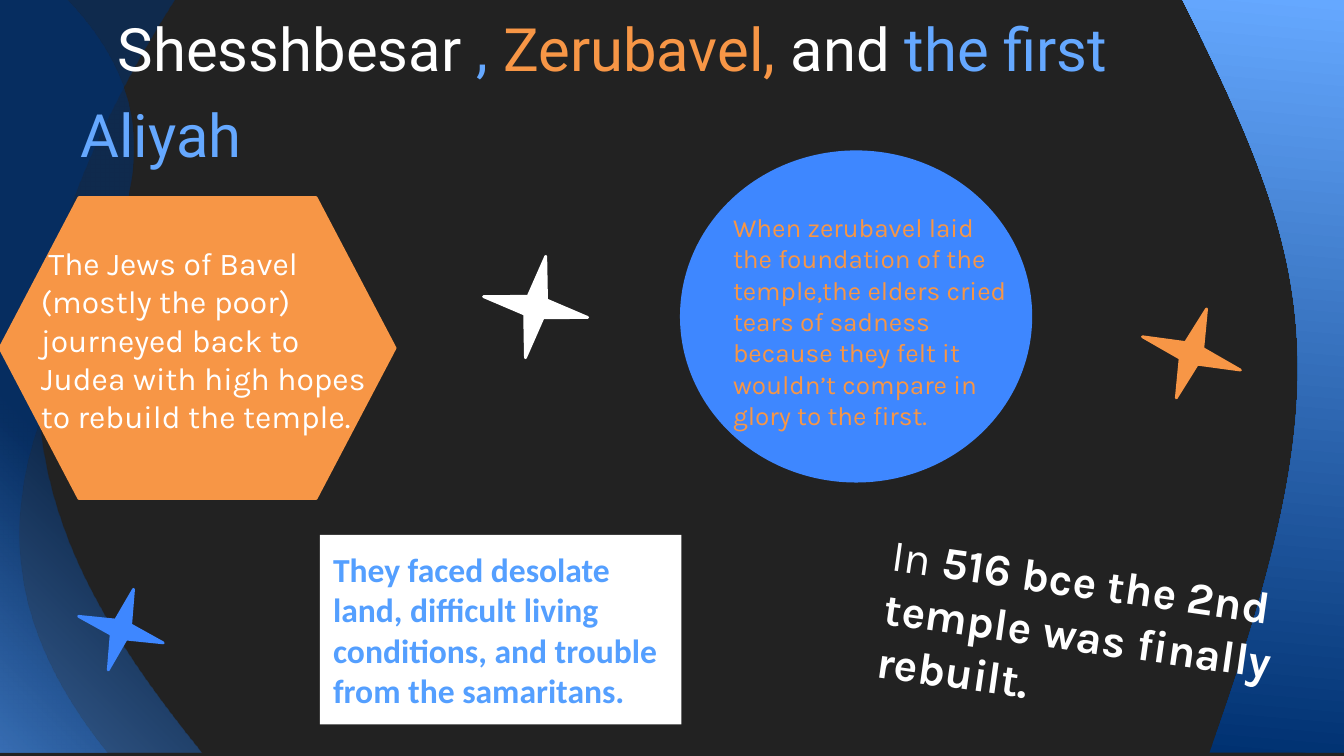
from dataclasses import dataclass
from typing import NamedTuple

from lxml import etree
from pptx import Presentation
from pptx.dml.color import RGBColor
from pptx.enum.shapes import MSO_SHAPE as Shape
from pptx.enum.text import MSO_ANCHOR as Anchor, PP_ALIGN as Align
from pptx.oxml.ns import nsdecls, qn
from pptx.util import Inches, Pt

CELL = Inches(0.1)  # grid of square cells
COLS, ROWS = 100, 56.25


@dataclass(frozen=True)
class Theme:
    ground: str = "222222"
    white: str = "FFFFFF"
    orange: str = "F79646"
    blue: str = "3E87FF"
    sky: str = "65A8FF"
    azure: str = "549FFF"
    navy: str = "003171"
    title_font: str = "Roboto"
    body_font: str = "Karla"
    note_font: str = "Calibri"
    title_size: int = 32
    title_leading: int = 46
    event_size: int = 24
    note_size: int = 18
    journey_size: int = 17
    tears_size: int = 14


T = Theme()


class Box(NamedTuple):
    """Columns and rows: left, top, width, height."""
    x: float
    y: float
    w: float
    h: float

    def inner(self, x, y, w, h):
        return Box(self.x + x * self.w, self.y + y * self.h, w * self.w, h * self.h)

    def emu(self):
        return [round(v * CELL) for v in self]


def rgb(color):
    return RGBColor.from_string(color)


def add_preset(s, kind, box, color, outlined=True):
    sp = s.shapes.add_shape(kind, *box.emu())
    sp.shadow.inherit = False
    sp.fill.solid()
    sp.fill.fore_color.rgb = rgb(color)
    if outlined:
        sp.line.color.rgb = rgb(color)
        sp.line.width = Pt(1.5)
    else:
        sp.line.fill.background()
    return sp


def style(r, font, size, color, bold=False):
    f = r.font
    f.name, f.size, f.bold = font, Pt(size), bold
    f.color.rgb = rgb(color)


def write(tf, lines, font, size, anchor=Anchor.TOP):
    """Each line is a list of (text, color, bold) runs."""
    tf.word_wrap = True
    tf.vertical_anchor = anchor
    tf.margin_left = tf.margin_right = tf.margin_top = tf.margin_bottom = CELL
    for i, runs in enumerate(lines):
        p = tf.add_paragraph() if i else tf.paragraphs[0]
        p.alignment = Align.LEFT
        for text, color, bold in runs:
            r = p.add_run()
            r.text = text
            style(r, font, size, color, bold)


def add_text(s, box, *args, **kwargs):
    sp = s.shapes.add_textbox(*box.emu())
    write(sp.text_frame, *args, **kwargs)
    return sp


def gradient(stops, direction):
    marks = "".join(
        f'<a:gs pos="{pos * 1000}"><a:srgbClr val="{color}">'
        f'<a:alpha val="{alpha * 1000}"/></a:srgbClr></a:gs>'
        for pos, color, alpha in stops)
    return etree.fromstring(
        f'<a:gradFill {nsdecls("a")} rotWithShape="1">'
        f'<a:gsLst>{marks}</a:gsLst>{direction}</a:gradFill>')


# Side waves: straight corners around one cubic curve
def add_wave(s, points, curve_at, fill):
    fb = s.shapes.build_freeform(*points[0], scale=CELL)
    fb.add_line_segments(points[1:], close=True)
    sp = fb.convert_to_shape()
    sp.shadow.inherit = False
    sp.line.fill.background()

    # Merge three segments into the curve
    segments = list(sp._element.iter(qn("a:lnTo")))[curve_at - 1:curve_at + 2]
    curve = etree.Element(qn("a:cubicBezTo"))
    segments[0].addprevious(curve)
    for seg in segments:
        curve.append(seg[0])
        seg.getparent().remove(seg)

    sp.fill.solid()
    solid = sp._element.spPr.find(qn("a:solidFill"))
    solid.getparent().replace(solid, fill)


def waves(s, box):
    left, top, right, bottom = box.x, box.y, box.x + box.w, box.y + box.h
    glow = ('<a:path path="circle">'
            '<a:fillToRect t="100000" r="100000"/></a:path>')
    haze = [(0, T.azure, 54), (41, T.navy, 54), (100, T.navy, 54)]
    add_wave(s, [(15, bottom), (left, bottom), (left, top), (12.7, top),
                 (-3.8, 27.2), (3.3, 41.3), (15, bottom)], 4, gradient(haze, glow))
    add_wave(s, [(7.5, bottom), (left, bottom), (left, top), (5, top),
                 (21.7, 18.2), (-12.2, 30.8), (7.5, bottom)], 4, gradient(haze, glow))
    slope = f'<a:lin ang="{275 * 60000}" scaled="0"/>'
    add_wave(s, [(right, bottom), (90, bottom), (100.1, 28.4), (98.1, 19.6),
                 (88.5, top), (right, top)], 2,
             gradient([(0, T.navy, 100), (100, T.sky, 100)], slope))


def title(s, box):
    runs = [("Shesshbesar ", T.white), (", ", T.sky), ("Zerubavel, ", T.orange),
            ("and ", T.white), ("the first Aliyah", T.sky)]
    sp = add_text(s, box, [[(text, color, False) for text, color in runs]],
                  T.title_font, T.title_size, anchor=Anchor.BOTTOM)
    p = sp.text_frame.paragraphs[0]
    p.line_spacing = Pt(T.title_leading)
    p._p.get_or_add_pPr().set("indent", str(Inches(0.28)))


def journey(s, box):
    add_preset(s, Shape.FLOWCHART_PREPARATION, box, T.orange)
    lines = [" The Jews of Bavel", "(mostly the poor)", "journeyed back to",
             "Judea with high hopes", "to rebuild the temple."]
    add_text(s, box.inner(0.07, 0.11, 0.92, 0.89),
             [[(line, T.white, False)] for line in lines],
             T.body_font, T.journey_size)


def hardships(s, box):
    sp = add_preset(s, Shape.RECTANGLE, box, T.white, outlined=False)
    text = ("They faced desolate land, difficult living conditions, "
            "and trouble from the samaritans.")
    write(sp.text_frame, [[(text, T.azure, True)]], T.note_font, T.note_size,
          anchor=Anchor.MIDDLE)


def tears(s, box):
    add_preset(s, Shape.OVAL, box, T.blue)
    text = ("When zerubavel laid the foundation of the temple,the elders cried "
            "tears of sadness because they felt it wouldn’t compare in glory "
            "to the first.")
    add_text(s, box.inner(0.11, 0.14, 0.89, 0.63), [[(text, T.orange, False)]],
             T.body_font, T.tears_size)


def rebuilding(s, box):
    runs = [("In", T.white, False),
            (" 516 bce the 2nd temple was finally rebuilt.", T.white, True)]
    add_text(s, box, [runs], T.body_font, T.event_size).rotation = 8.1


def star(s, box, color, turn):
    sp = add_preset(s, Shape.STAR_4_POINT, box, color)
    sp.adjustments[0] = 1 / 8
    sp.rotation = turn


def main():
    prs = Presentation()
    prs.slide_width, prs.slide_height = round(COLS * CELL), round(ROWS * CELL)
    s = prs.slides.add_slide(prs.slide_layouts[6])
    s.background.fill.solid()
    s.background.fill.fore_color.rgb = rgb(T.ground)

    waves(s, Box(0, 0, COLS, ROWS))
    journey(s, Box(0, 14.7, 29.4, 22.4))
    title(s, Box(5, 2.7, 90, 10.9))
    hardships(s, Box(23.8, 39.8, 26.9, 14.1))
    tears(s, Box(50.7, 11.3, 26, 24.5))
    rebuilding(s, Box(64.8, 40.3, 32.9, 13))
    star(s, Box(84.8, 22.8, 7.7, 7), T.orange, 18.8)
    star(s, Box(5.7, 43.7, 6.6, 6.3), T.blue, 17.4)
    star(s, Box(35.9, 19, 7.9, 7.7), T.white, 11.3)
    prs.save("out.pptx")


if __name__ == "__main__":
    main()
